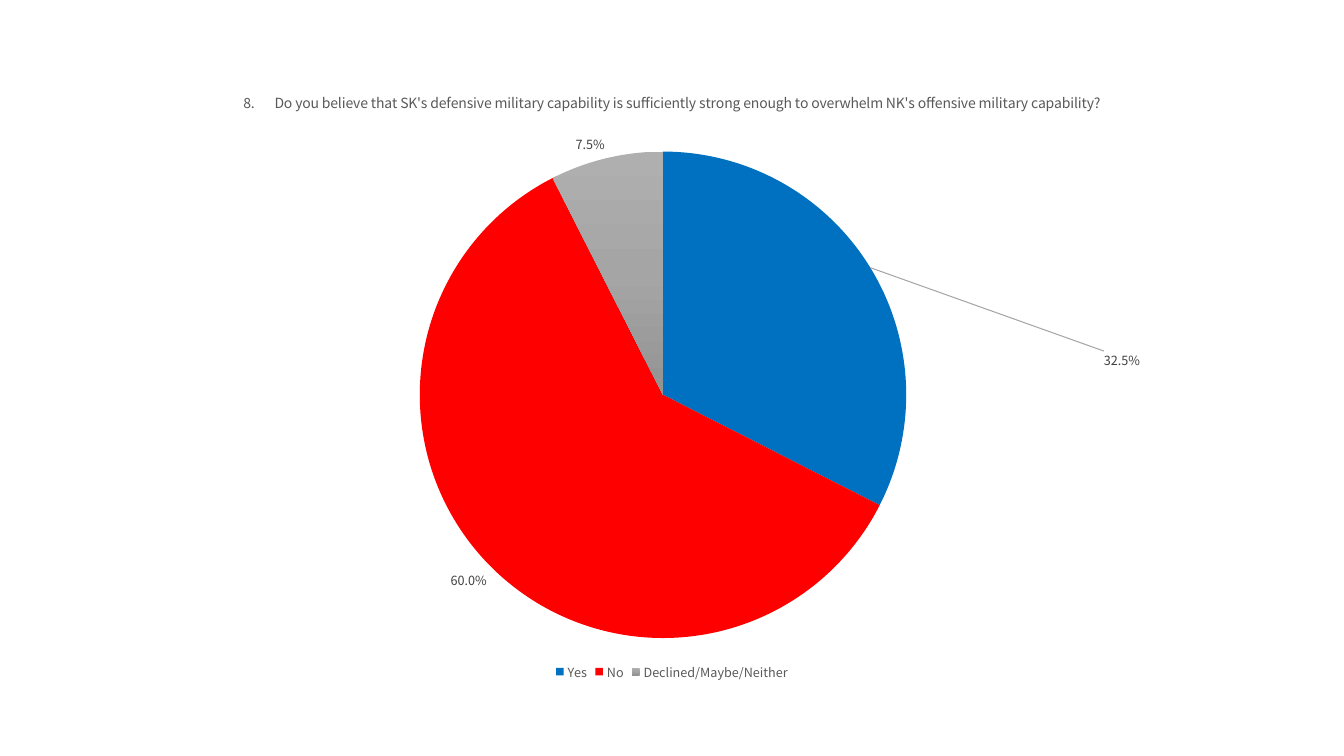
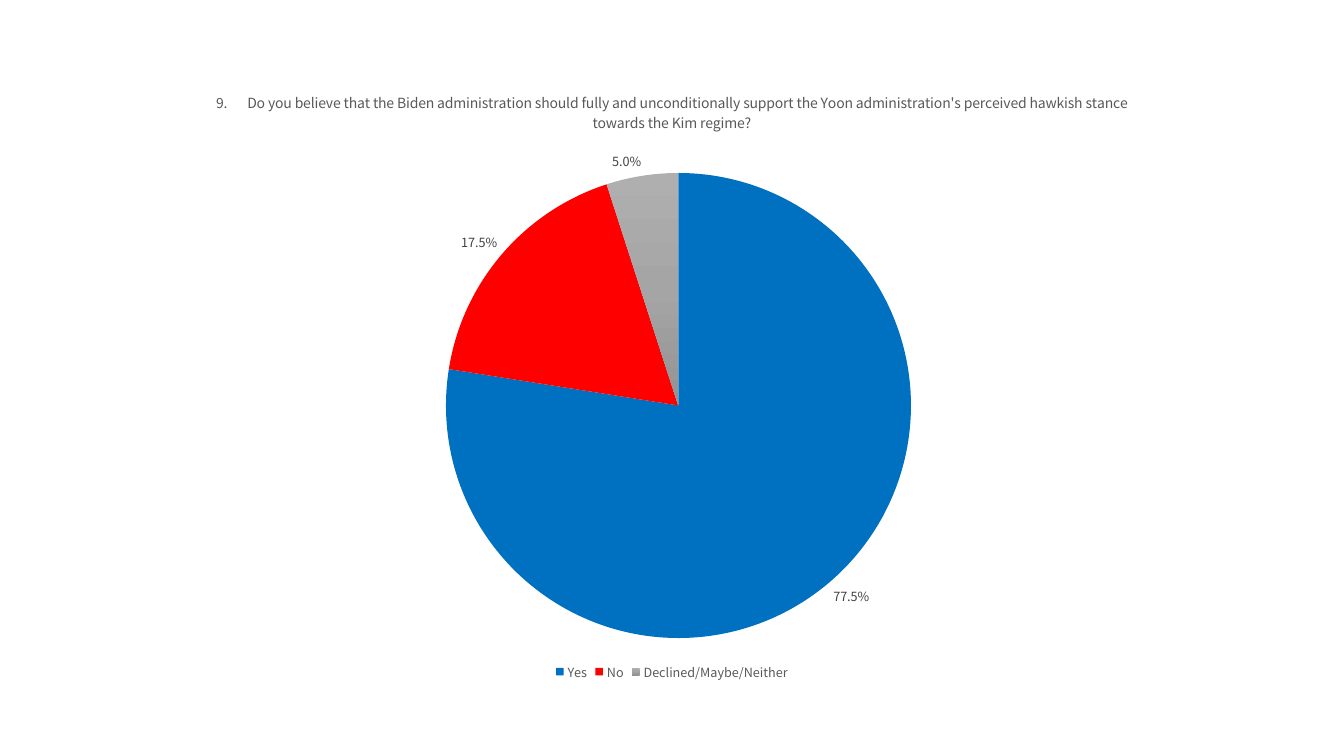
from copy import deepcopy

from pptx import Presentation
from pptx.chart.data import CategoryChartData
from pptx.dml.color import RGBColor
from pptx.enum.chart import XL_CHART_TYPE, XL_LABEL_POSITION, XL_LEGEND_POSITION
from pptx.oxml import parse_xml
from pptx.oxml.ns import nsdecls, qn
from pptx.util import Cm, Pt

PIE = XL_CHART_TYPE.PIE
OUTSIDE_END = XL_LABEL_POSITION.OUTSIDE_END
BOTTOM = XL_LEGEND_POSITION.BOTTOM

FONT = "Noto Sans CJK KR"
TEXT, LABEL, LEADER = "595959", "404040", "A6A6A6"
YES, NO = "0070C0", "FF0000"
NEUTRAL = ("AFAFAF", "A5A5A5", "939393")
ANSWERS = ("Yes", "No", "Declined/Maybe/Neither")
PERCENT = "0.0%"
NUMBER_GAP = " 　 "  # one full-width space between number and question

SLIDE_W, SLIDE_H = 33.87, 19.05
CHART_BOX = (1.78, 1.78, 30.3, 15.47)  # left, top, width, height in cm
PIE_BOTTOM = 14.3  # below the top of the chart box, in cm

QUESTIONS = [
    {
        "number": "8.",
        "question": "Do you believe that SK's defensive military capability is "
                    "sufficiently strong enough to overwhelm NK's offensive "
                    "military capability?",
        "shares": (0.325, 0.6, 0.075),
        "pie_left": 8.8,
        "diameter": 12.26,
        "yes_label_shift": (0.19, 0.17),
    },
    {
        "number": "9.",
        "question": "Do you believe that the Biden administration should fully and "
                    "unconditionally support the Yoon administration's perceived "
                    "hawkish stance towards the Kim regime?",
        "shares": (0.775, 0.175, 0.05),
        "pie_left": 9.46,
        "diameter": 11.72,
    },
]


def rgb(hex_color):
    return RGBColor.from_string(hex_color)


def set_font(font, size, color):
    font.name = FONT
    font.size = Pt(size)
    font.bold = False
    font.color.rgb = rgb(color)


def manual_layout(**settings):
    """Return a c:layout element with the given settings in schema order."""
    parts = "".join(f'<c:{key} val="{value}"/>' for key, value in settings.items())
    return parse_xml(f'<c:layout {nsdecls("c")}><c:manualLayout>{parts}'
                     '</c:manualLayout></c:layout>')


def place_pie(chart, box, pie_left, diameter):
    """Fix the pie's square, given in cm within the chart box."""
    _, _, width, height = box
    plot_area = chart._chartSpace.find(".//" + qn("c:plotArea"))
    for layout in plot_area.findall(qn("c:layout")):
        plot_area.remove(layout)
    plot_area.insert(0, manual_layout(
        layoutTarget="inner", xMode="edge", yMode="edge",
        x=round(pie_left / width, 4),
        y=round((PIE_BOTTOM - diameter) / height, 4),
        w=round(diameter / width, 4),
        h=round(diameter / height, 4)))


def color_slices(series):
    for index, color in enumerate((YES, NO)):
        fill = series.points[index].format.fill
        fill.solid()
        fill.fore_color.rgb = rgb(color)

    fill = series.points[2].format.fill
    fill.gradient()
    fill.gradient_angle = 270
    stop_list = series._element.find(".//" + qn("a:gsLst"))
    middle = deepcopy(stop_list[0])
    stop_list.insert(1, middle)
    for stop, position, color in zip(fill.gradient_stops, (0, 0.5, 1), NEUTRAL):
        stop.position = position
        stop.color.rgb = rgb(color)


def label_slices(series):
    labels = series.data_labels
    labels.show_value = True
    labels.number_format = PERCENT
    labels.number_format_is_linked = False
    labels.position = OUTSIDE_END
    set_font(labels.font, 9, LABEL)
    labels._element.append(parse_xml(
        f'<c:leaderLines {nsdecls("c", "a")}><c:spPr><a:ln w="9525"><a:solidFill>'
        f'<a:srgbClr val="{LEADER}"/></a:solidFill></a:ln></c:spPr></c:leaderLines>'))


def shift_label(series, index, shift):
    """Move one label by fractions of the chart, so that a leader line shows."""
    label = series.points[index].data_label
    label.position = OUTSIDE_END
    set_font(label.font, 9, LABEL)
    element = series._element.find(".//" + qn("c:dLbl"))
    number_format = parse_xml(
        f'<c:numFmt {nsdecls("c")} formatCode="{PERCENT}" sourceLinked="0"/>')
    element.insert(1, manual_layout(x=shift[0], y=shift[1]))
    element.insert(2, number_format)


def add_question_chart(slide, box, number, question, shares, pie_left, diameter,
                       yes_label_shift=None):
    title = number + NUMBER_GAP + question
    data = CategoryChartData(number_format=PERCENT)
    data.categories = ANSWERS
    data.add_series(title, shares)
    chart = slide.shapes.add_chart(PIE, *map(Cm, box), data).chart
    set_font(chart.font, 10, "000000")

    chart.has_title = True
    chart.chart_title.include_in_layout = False
    heading = chart.chart_title.text_frame.paragraphs[0].add_run()
    heading.text = title
    set_font(heading.font, 10, TEXT)

    chart.has_legend = True
    chart.legend.position = BOTTOM
    chart.legend.include_in_layout = False
    set_font(chart.legend.font, 9, TEXT)

    chart.plots[0].vary_by_categories = True
    series = chart.plots[0].series[0]
    color_slices(series)
    label_slices(series)
    if yes_label_shift:
        shift_label(series, 0, yes_label_shift)
    place_pie(chart, box, pie_left, diameter)


def main():
    deck = Presentation()
    deck.slide_width, deck.slide_height = Cm(SLIDE_W), Cm(SLIDE_H)
    blank = deck.slide_layouts[6]
    for question in QUESTIONS:
        add_question_chart(deck.slides.add_slide(blank), CHART_BOX, **question)
    deck.save("out.pptx")


if __name__ == "__main__":
    main()
